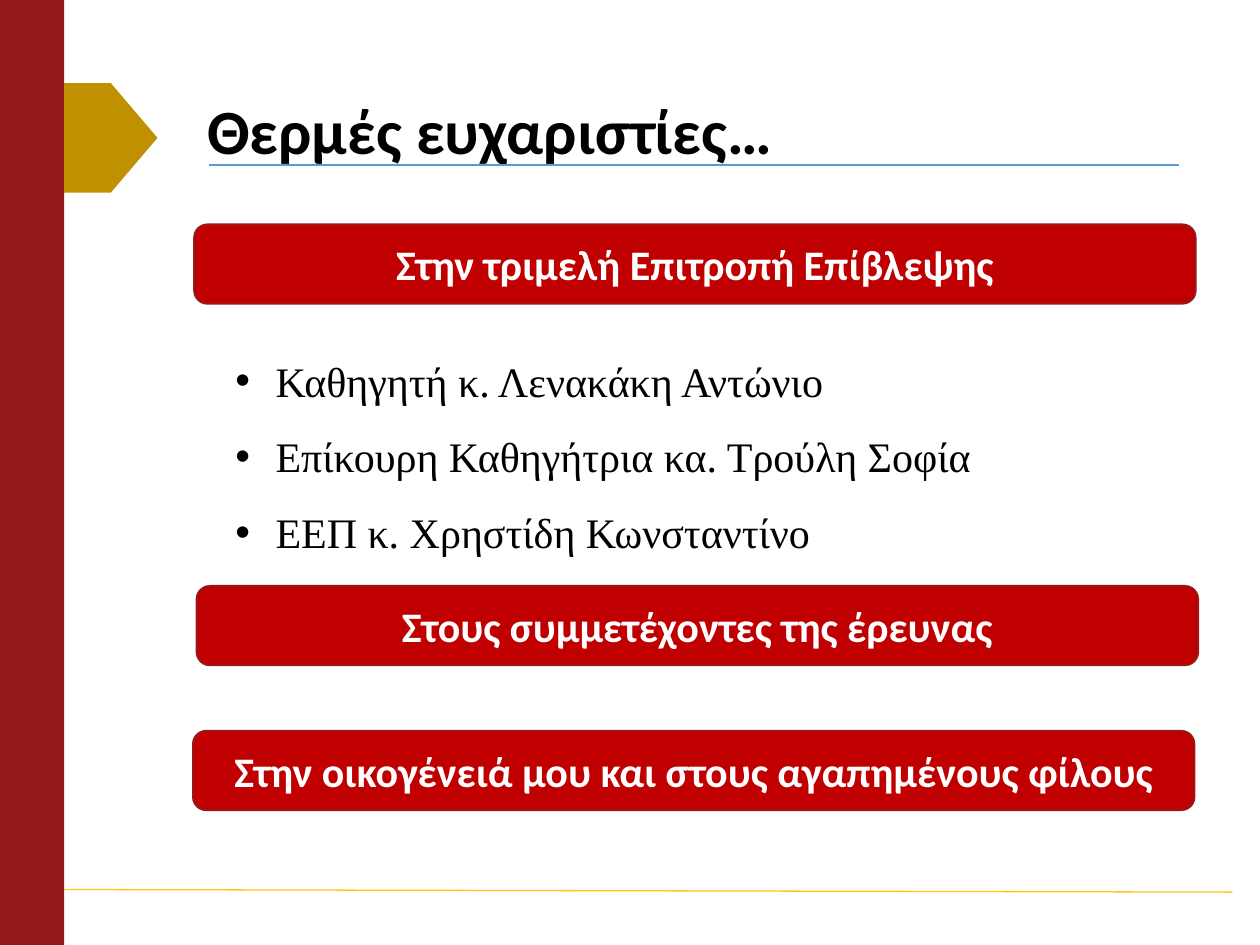
from lxml.etree import SubElement
from pptx import Presentation
from pptx.dml.color import RGBColor
from pptx.enum.shapes import MSO_CONNECTOR as Connector, MSO_SHAPE as Shape
from pptx.enum.text import MSO_ANCHOR as Anchor, MSO_AUTO_SIZE as AutoSize, PP_ALIGN as Align
from pptx.oxml.ns import qn
from pptx.util import Pt

BLACK = RGBColor(0x00, 0x00, 0x00)
WHITE = RGBColor(0xFF, 0xFF, 0xFF)
DARK_RED = RGBColor(0x93, 0x1B, 0x1B)
RED = RGBColor(0xC0, 0x00, 0x00)
GOLD = RGBColor(0xBF, 0x90, 0x00)
YELLOW = RGBColor(0xFF, 0xC6, 0x1A)
BLUE = RGBColor(0x5B, 0x9B, 0xD5)

BANNERS = [
    ("Στην τριμελή Επιτροπή Επίβλεψης", 110.9, 128.2),
    ("Στους συμμετέχοντες της έρευνας", 112.3, 334.8),
    ("Στην οικογένειά μου και στους αγαπημένους φίλους", 110.2, 417.6),
]
COMMITTEE = [
    "Καθηγητή κ. Λενακάκη Αντώνιο",
    "Επίκουρη Καθηγήτρια κα. Τρούλη Σοφία",
    "ΕΕΠ κ. Χρηστίδη Κωνσταντίνο",
]


def format_text(para, font, size, color, bold=False):
    for span in para.runs:
        span.font.name = font
        span.font.size = Pt(size)
        span.font.bold = bold
        span.font.color.rgb = color


def add_block(page, kind, left, top, width, height, fill):
    block = page.shapes.add_shape(kind, Pt(left), Pt(top), Pt(width), Pt(height))
    block.shadow.inherit = False
    block.fill.solid()
    block.fill.fore_color.rgb = fill
    block.line.fill.background()
    return block


def add_rule(page, left, top, right, bottom, color):
    rule = page.shapes.add_connector(
        Connector.STRAIGHT, Pt(left), Pt(top), Pt(right), Pt(bottom))
    rule.line.color.rgb = color
    rule.line.width = Pt(0.75)
    SubElement(rule._element.spPr, qn("a:effectLst"))


def set_title(page, text):
    title = page.shapes.title
    title.left, title.top, title.width, title.height = Pt(91.4), Pt(34.4), Pt(580.3), Pt(85)
    frame = title.text_frame
    frame.text = text
    frame.vertical_anchor = Anchor.MIDDLE
    frame.margin_left = Pt(27)
    para = frame.paragraphs[0]
    para.alignment = Align.LEFT
    para.line_spacing = 0.9
    format_text(para, "Calibri", 36, BLACK, bold=True)


def add_banner(page, text, left, top):
    banner = add_block(page, Shape.ROUNDED_RECTANGLE, left, top, 572.4, 45.4, RED)
    banner.line.color.rgb = DARK_RED
    banner.line.width = Pt(1)
    frame = banner.text_frame
    frame.text = text
    frame.vertical_anchor = Anchor.MIDDLE
    para = frame.paragraphs[0]
    para.alignment = Align.CENTER
    format_text(para, "Calibri", 24, WHITE, bold=True)


def add_bullet(para, indent):
    properties = para._p.get_or_add_pPr()
    properties.set("marL", str(Pt(indent)))
    properties.set("indent", str(-Pt(indent)))
    SubElement(properties, qn("a:buFont"), typeface="Arial")
    SubElement(properties, qn("a:buChar"), char="•")


def add_bullet_list(page, items):
    box = page.shapes.add_textbox(Pt(127.4), Pt(185), Pt(544.3), Pt(138.2))
    frame = box.text_frame
    frame.word_wrap = True
    frame.auto_size = AutoSize.SHAPE_TO_FIT_TEXT
    frame.text = "\n".join(items)
    for para in frame.paragraphs:
        para.line_spacing = 1.5
        add_bullet(para, 23)
        format_text(para, "Times New Roman", 24, BLACK)


def main():
    deck = Presentation()
    deck.slide_width, deck.slide_height = Pt(720), Pt(540)
    page = deck.slides.add_slide(deck.slide_layouts[5])
    add_block(page, Shape.RECTANGLE, 0, 0, 36.7, 540, DARK_RED)
    add_rule(page, 119.5, 94.3, 673.9, 94.3, BLUE)
    add_rule(page, 36.7, 508.3, 704.2, 509.8, YELLOW)
    add_block(page, Shape.PENTAGON, 36.7, 47.5, 53.3, 62.6, GOLD)
    set_title(page, "Θερμές ευχαριστίες…")
    for text, left, top in BANNERS:
        add_banner(page, text, left, top)
    add_bullet_list(page, COMMITTEE)
    deck.save("out.pptx")


if __name__ == "__main__":
    main()
